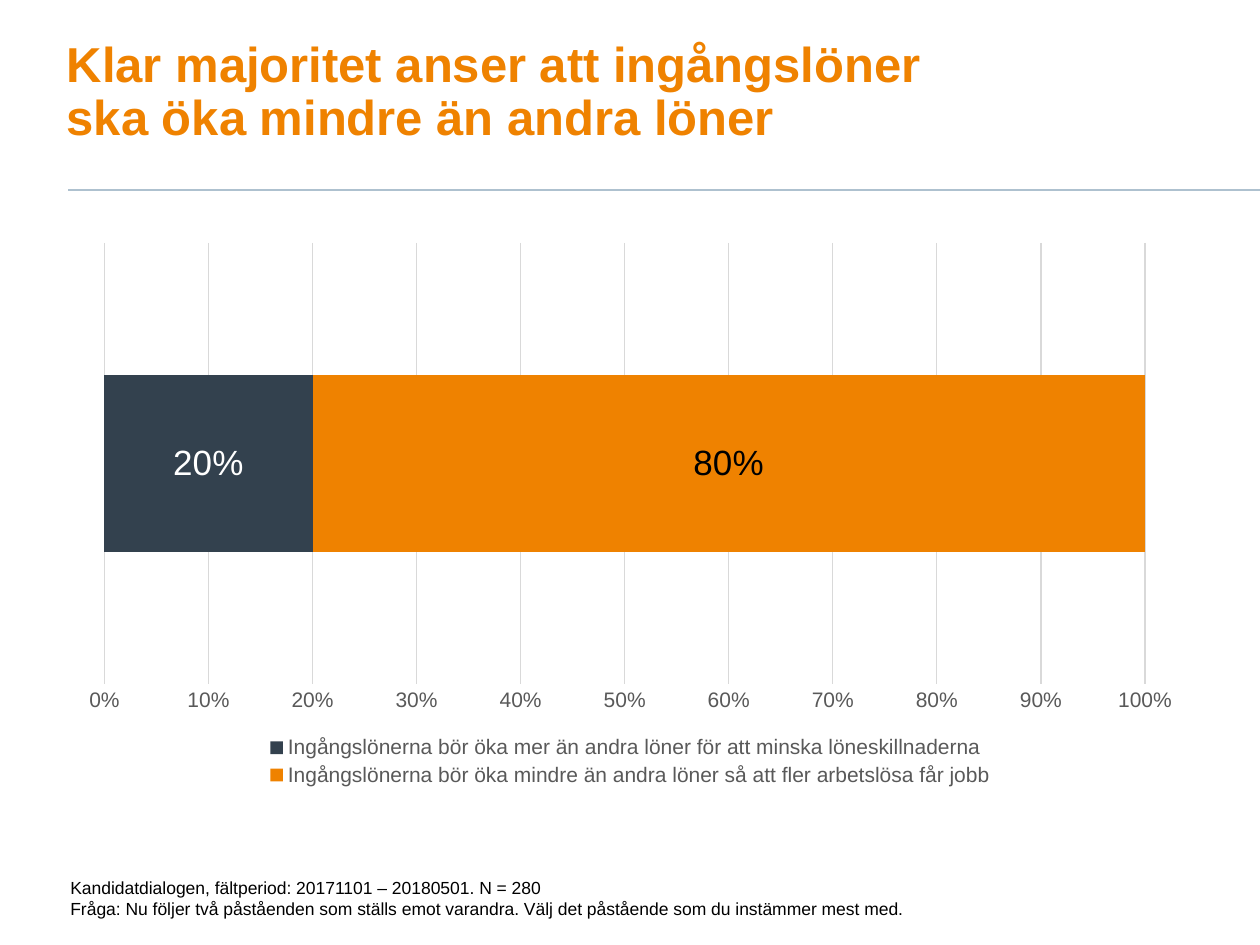
from lxml import etree
from pptx import Presentation
from pptx.chart.data import CategoryChartData
from pptx.dml.color import RGBColor
from pptx.enum.chart import (XL_CHART_TYPE, XL_LABEL_POSITION, XL_LEGEND_POSITION,
                             XL_TICK_MARK)
from pptx.enum.shapes import MSO_CONNECTOR
from pptx.enum.text import MSO_ANCHOR, MSO_AUTO_SIZE, PP_ALIGN
from pptx.oxml.ns import qn
from pptx.util import Inches, Pt

BAR_STACKED_100 = XL_CHART_TYPE.BAR_STACKED_100
LABEL_CENTER = XL_LABEL_POSITION.CENTER
LEGEND_BOTTOM = XL_LEGEND_POSITION.BOTTOM
NO_TICK = XL_TICK_MARK.NONE
STRAIGHT = MSO_CONNECTOR.STRAIGHT
BOTTOM = MSO_ANCHOR.BOTTOM
FIT_SHAPE = MSO_AUTO_SIZE.SHAPE_TO_FIT_TEXT
LEFT = PP_ALIGN.LEFT

ORANGE = RGBColor(0xEF, 0x82, 0x00)
SLATE = RGBColor(0x33, 0x41, 0x4E)
RULE_BLUE = RGBColor(0xAE, 0xC1, 0xCF)
GRID_GRAY = RGBColor(0xD9, 0xD9, 0xD9)
TEXT_GRAY = RGBColor(0x59, 0x59, 0x59)
BLACK = RGBColor(0x00, 0x00, 0x00)
WHITE = RGBColor(0xFF, 0xFF, 0xFF)

FONT = "Arial"
TITLE = "Klar majoritet anser att ingångslöner ska öka mindre än andra löner"
# Statement, share, bar colour, label colour
ANSWERS = [
    ("Ingångslönerna bör öka mer än andra löner för att minska löneskillnaderna",
     0.2, SLATE, WHITE),
    ("Ingångslönerna bör öka mindre än andra löner så att fler arbetslösa får jobb",
     0.8, ORANGE, BLACK),
]
NOTES = [
    "Kandidatdialogen, fältperiod: 20171101 – 20180501. N = 280",
    "Fråga: Nu följer två påståenden som ställs emot varandra. "
    "Välj det påstående som du instämmer mest med.",
]


def set_attributes(target, values):
    for name, value in values.items():
        setattr(target, name, value)


def format_font(font, size, color, bold=False):
    set_attributes(font, {"name": FONT, "size": Pt(size), "bold": bold})
    font.color.rgb = color


def add_title(slide):
    title = slide.shapes.title
    set_attributes(title, {"left": Inches(0.53), "top": Inches(0.31),
                           "width": Inches(7.16), "height": Inches(0.9)})
    frame = title.text_frame
    set_attributes(frame, {"margin_left": 0, "margin_top": 0,
                           "margin_right": Inches(0.1), "margin_bottom": Inches(0.05),
                           "vertical_anchor": BOTTOM, "word_wrap": True,
                           "auto_size": MSO_AUTO_SIZE.NONE, "text": TITLE})
    paragraph = frame.paragraphs[0]
    set_attributes(paragraph, {"alignment": LEFT, "line_spacing": 0.9})
    format_font(paragraph.runs[0].font, 28, ORANGE, bold=True)


def add_rule(slide):
    rule = slide.shapes.add_connector(STRAIGHT, Inches(0.54), Inches(1.51),
                                      Inches(10), Inches(1.51))
    rule.line.color.rgb = RULE_BLUE
    rule.line.width = Pt(1)
    etree.SubElement(rule._element.spPr, qn("a:effectLst"))


def format_value_axis(axis):
    set_attributes(axis, {"major_tick_mark": NO_TICK, "minor_tick_mark": NO_TICK,
                          "has_major_gridlines": True, "minimum_scale": 0,
                          "maximum_scale": 1, "major_unit": 0.1})
    set_attributes(axis.tick_labels, {"number_format": "0%",
                                      "number_format_is_linked": False})
    format_font(axis.tick_labels.font, 12, TEXT_GRAY)
    axis.format.line.fill.background()
    grid_line = axis.major_gridlines.format.line
    grid_line.color.rgb = GRID_GRAY
    grid_line.width = Pt(0.75)


def format_series(series, bar_color, label_color):
    series.format.fill.solid()
    series.format.fill.fore_color.rgb = bar_color
    labels = series.data_labels
    set_attributes(labels, {"show_value": True, "number_format": "0%",
                            "number_format_is_linked": False,
                            "position": LABEL_CENTER})
    format_font(labels.font, 20, label_color)


def add_answer_chart(slide):
    data = CategoryChartData(number_format="0%")
    data.categories = ["1"]
    for statement, share, _, _ in ANSWERS:
        data.add_series(statement, [share])
    chart = slide.shapes.add_chart(BAR_STACKED_100, Inches(0.53), Inches(1.84),
                                   Inches(8.95), Inches(4.44), data).chart
    format_font(chart.font, 10, BLACK)
    set_attributes(chart, {"has_title": False, "has_legend": True})
    set_attributes(chart.legend, {"position": LEGEND_BOTTOM,
                                  "include_in_layout": False})
    format_font(chart.legend.font, 12, TEXT_GRAY)
    chart.category_axis.visible = False
    format_value_axis(chart.value_axis)

    plot = chart.plots[0]
    set_attributes(plot, {"gap_width": 150, "overlap": 100,
                          "vary_by_categories": False})
    for series, (_, _, bar_color, label_color) in zip(plot.series, ANSWERS):
        format_series(series, bar_color, label_color)


def add_notes_box(slide):
    box = slide.shapes.add_textbox(Inches(0.46), Inches(6.91),
                                   Inches(7.98), Inches(0.44))
    frame = box.text_frame
    set_attributes(frame, {"word_wrap": True, "auto_size": FIT_SHAPE,
                           "text": "\n".join(NOTES)})
    for paragraph in frame.paragraphs:
        format_font(paragraph.runs[0].font, 10, BLACK)


def main():
    presentation = Presentation()
    set_attributes(presentation, {"slide_width": Inches(10),
                                  "slide_height": Inches(7.5)})
    # Title Only layout
    slide = presentation.slides.add_slide(presentation.slide_layouts[5])

    # Heading
    add_rule(slide)
    add_title(slide)
    # Survey result and its source
    add_answer_chart(slide)
    add_notes_box(slide)

    presentation.save("out.pptx")


if __name__ == "__main__":
    main()
